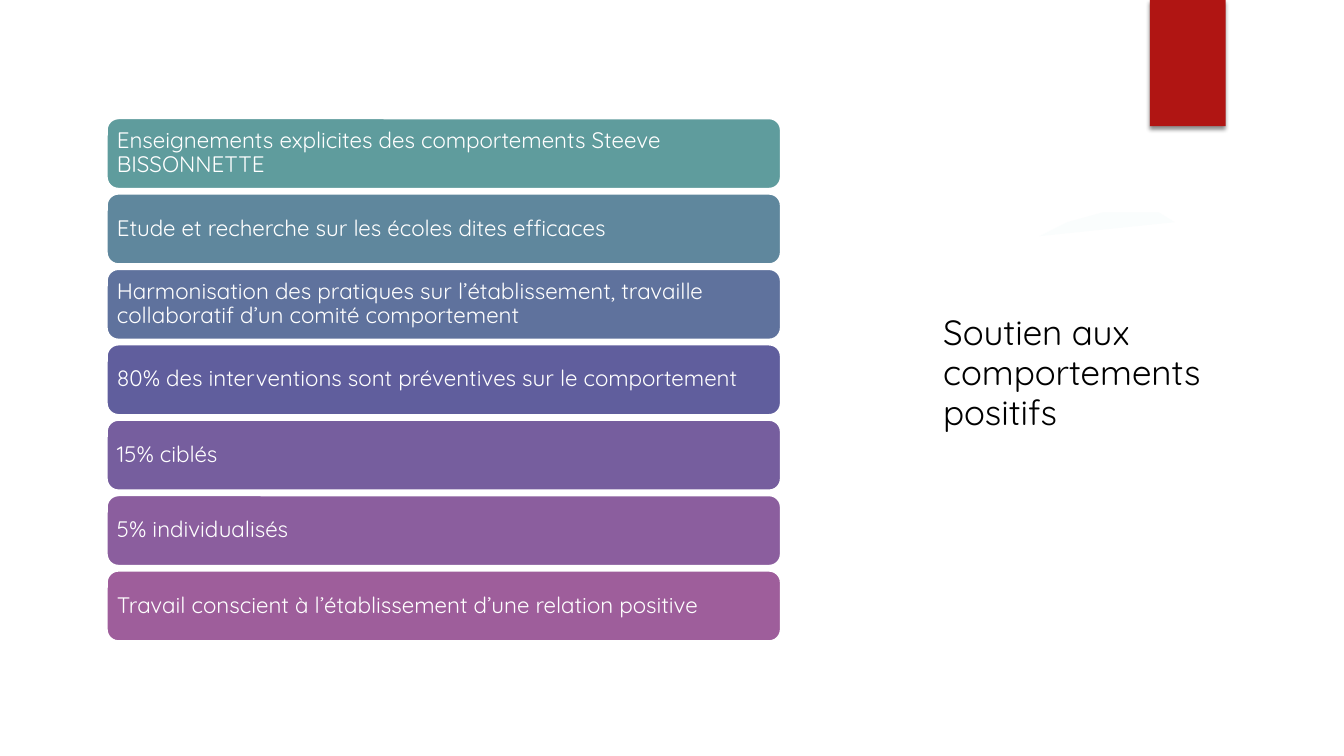
from lxml import etree
from pptx import Presentation
from pptx.dml.color import RGBColor
from pptx.enum.shapes import MSO_SHAPE as Shape
from pptx.enum.text import MSO_ANCHOR as Anchor, PP_ALIGN as Align
from pptx.oxml import parse_xml
from pptx.oxml.ns import nsdecls
from pptx.util import Cm, Pt


def color(value):
    return RGBColor.from_string(value)


def write(shape, text, size, text_color, spacing):
    frame = shape.text_frame
    frame.text = text
    frame.word_wrap = True
    frame.vertical_anchor = Anchor.MIDDLE
    paragraph = frame.paragraphs[0]
    paragraph.alignment = Align.LEFT
    paragraph.line_spacing = spacing
    font = paragraph.runs[0].font
    font.name = "Quicksand"
    font.size = Pt(size)
    font.color.rgb = color(text_color)
    return frame


presentation = Presentation()
presentation.slide_width = Cm(33.87)
presentation.slide_height = Cm(19.05)
slide = presentation.slides.add_slide(presentation.slide_layouts[6])
shapes = slide.shapes

builder = shapes.build_freeform(Cm(26.2), Cm(5.95))
builder.add_line_segments(
    [(Cm(x), Cm(y)) for x, y in [(26.9, 5.6), (27.8, 5.35), (29.2, 5.35), (29.6, 5.6)]]
)
glow = builder.convert_to_shape()
glow.shadow.inherit = False
glow.fill.solid()
glow.fill.fore_color.rgb = color("FAFDFD")
glow.line.fill.background()

ribbon = shapes.add_shape(Shape.RECTANGLE, Cm(28.98), Cm(0), Cm(1.91), Cm(3.18))
ribbon.fill.solid()
ribbon.fill.fore_color.rgb = color("B01513")
ribbon.line.fill.background()
ribbon.shadow.inherit = False
effects = ribbon._element.spPr.find("{*}effectLst")
effects.append(parse_xml(
    f'<a:outerShdw {nsdecls("a")} blurRad="38100" dist="25400" dir="5400000" rotWithShape="0">'
    '<a:srgbClr val="000000"><a:alpha val="45000"/></a:srgbClr></a:outerShdw>'
))

title = shapes.add_textbox(Cm(23.52), Cm(2.69), Cm(8.18), Cm(13.44))
write(title, "Soutien aux comportements positifs", 25, "000000", 0.96)

principles = [
    ("Enseignements explicites des comportements Steeve BISSONNETTE", "5F9C9D"),
    ("Etude et recherche sur les écoles dites efficaces", "5F879D"),
    ("Harmonisation des pratiques sur l’établissement, travaille collaboratif "
     "d’un comité comportement", "5F729D"),
    ("80% des interventions sont préventives sur le comportement", "605E9D"),
    ("15% ciblés", "765E9E"),
    ("5% individualisés", "8B5E9E"),
    ("Travail conscient à l’établissement d’une relation positive", "9E5E9B"),
]
for index, (text, fill) in enumerate(principles):
    bar = shapes.add_shape(
        Shape.ROUNDED_RECTANGLE, Cm(2.69), Cm(2.98 + 1.9 * index), Cm(16.99), Cm(1.78)
    )
    bar.shadow.inherit = False
    bar.fill.solid()
    bar.fill.fore_color.rgb = color(fill)
    bar.line.color.rgb = color("FFFFFF")
    bar.line.width = Pt(1.5)
    frame = write(bar, text, 16, "FFFFFF", 0.9)
    frame.margin_left = frame.margin_right = Cm(0.17)
    frame.margin_top = frame.margin_bottom = Cm(0.17)

presentation.save("out.pptx")
